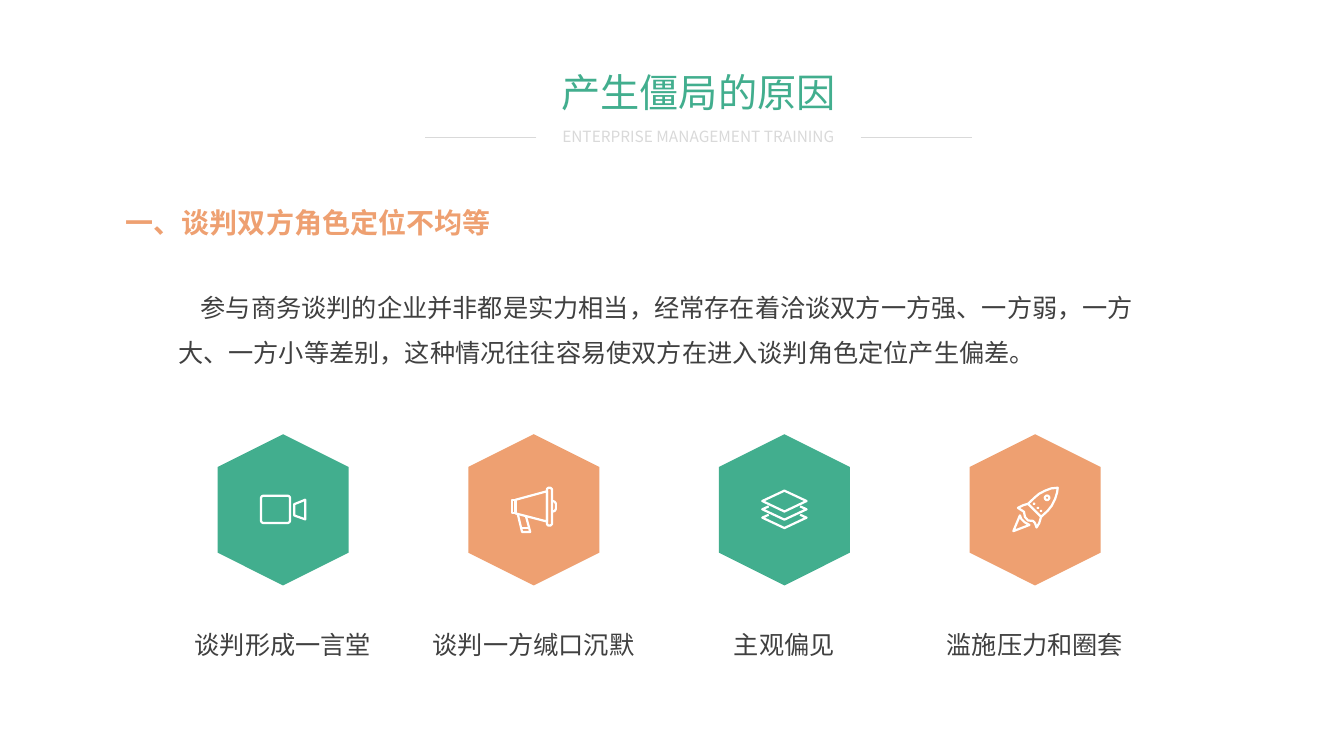
import math
import pptx
import pptx.dml.color
import pptx.enum.shapes
import pptx.enum.text
import pptx.oxml.ns
import pptx.util
from lxml import etree

Pt = pptx.util.Pt
SHAPE = pptx.enum.shapes.MSO_SHAPE
CENTER = pptx.enum.text.PP_ALIGN.CENTER
FONT = "Noto Sans CJK SC"
GREEN, ORANGE, DARK, PALE, WHITE = "42AE8E", "EEA071", "404040", "D9D9D9", "FFFFFF"


def ring(x, y, radius, sides):
    """A closed regular polygon as one icon stroke."""
    turns = [2 * math.pi * i / sides for i in range(sides)]
    return True, [(x + radius * math.cos(t), y + radius * math.sin(t)) for t in turns]


def layer(drop):
    return False, [(-112, drop - 25), (-158, drop - 4), (0, drop + 70),
                   (158, drop - 4), (112, drop - 25)]


# Content: text as (words, left, top, width, height, format)
TITLE = ("产生僵局的原因", 385.9, 45.4, 226, 41,
         {"size": Pt(28), "color": GREEN, "alignment": CENTER})
SUBTITLE = ("ENTERPRISE MANAGEMENT TRAINING", 383.2, 87.3, 231.6, 21,
            {"size": Pt(11), "color": PALE, "alignment": CENTER})
HEADING = ("一、谈判双方角色定位不均等", 82.8, 143.3, 486, 31.7,
           {"size": Pt(20), "color": ORANGE, "bold": True})
BODY = ("参与商务谈判的企业并非都是实力相当，经常存在着洽谈双方一方强、一方弱，"
        "一方大、一方小等差别，这种情况往往容易使双方在进入谈判角色定位产生偏差。",
        120.2, 194.4, 700.6, 69.1,
        {"size": Pt(18), "color": DARK, "line_spacing": 1.5, "indent": Pt(16.1)})

# Icons: strokes as (closed, points), in tenths of a point from the hexagon centre
CAMERA = [
    (True, [(-158, -85), (-153, -96), (-142, -101), (34, -101), (45, -96), (50, -85),
            (50, 78), (45, 89), (34, 94), (-142, 94), (-153, 89), (-158, 78)]),
    (True, [(79, -40), (158, -72), (158, 68), (79, 40)]),
]
MEGAPHONE = [
    (True, [(-158, -72), (-130, -72), (-130, 25), (-158, 25)]),
    (True, [(-130, -72), (94, -133), (94, 83), (-130, 25)]),
    (True, [(94, -148), (104, -158), (120, -158), (130, -148),
            (130, 102), (120, 112), (104, 112), (94, 102)]),
    (False, [(130, -65), (150, -58), (158, -45), (158, -6), (150, 7), (130, 14)]),
    (False, [(-115, 25), (-83, 158), (-25, 158), (-54, 50)]),
    (False, [(-88, 130), (-32, 130)]),
]
LAYERS = [(True, [(0, -137), (158, -63), (0, 12), (-158, -63)]), layer(0), layer(60)]
ROCKET = [
    (True, [(162, -158), (115, -153), (72, -137), (30, -115), (0, -90), (-50, -43),
            (43, 50), (90, 7), (120, -30), (144, -79), (158, -125)]),
    (False, [(-50, -43), (-85, -33), (-122, -14), (-79, 14), (-72, 50), (-50, 76),
             (-14, 79), (0, 95), (11, 126), (30, 95), (43, 50)]),
    (True, [(-108, 40), (-155, 152), (-40, 108), (-75, 88), (-98, 65)]),
    ring(86, -86, 16, 16),
] + [ring(x, y, 2, 4) for x, y in [(-7, -43), (21, -14), (43, 7)]]

CAUSES = [
    ("谈判形成一言堂", GREEN, CAMERA),
    ("谈判一方缄口沉默", ORANGE, MEGAPHONE),
    ("主观偏见", GREEN, LAYERS),
    ("滥施压力和圈套", ORANGE, ROCKET),
]

# Layout
FIRST_X, PITCH, HEXAGON_Y = 202.2, 179.05, 364.2
HEXAGON_LENGTH, HEXAGON_BREADTH = 108, 93.6
LABEL_TOP, LABEL_HEIGHT, LABEL_SIZE, INSETS = 445.7, 29, 18, 14.4
RULE_LENGTH = 79.3

deck = pptx.Presentation()
deck.slide_width, deck.slide_height = Pt(960), Pt(540)
slide = deck.slides.add_slide(deck.slide_layouts[6])
shapes = slide.shapes


def rgb(hex_color):
    return pptx.dml.color.RGBColor.from_string(hex_color)


def add_text(words, left, top, width, height, style, wrap=True):
    box = shapes.add_textbox(Pt(left), Pt(top), Pt(width), Pt(height))
    box.text_frame.word_wrap = wrap
    paragraph = box.text_frame.paragraphs[0]
    run = paragraph.add_run()
    run.text = words
    run.font.name = FONT
    properties = run.font._element
    etree.SubElement(properties, pptx.oxml.ns.qn("a:ea"), typeface=FONT)
    for key, value in style.items():
        if key == "color":
            run.font.color.rgb = rgb(value)
        elif key == "indent":
            paragraph._p.get_or_add_pPr().set("indent", str(int(value)))
        else:
            setattr(run.font if key in ("size", "bold") else paragraph, key, value)
    return box


def add_icon(strokes, x, y):
    builder = None
    for closed, points in strokes:
        if builder is None:
            builder = shapes.build_freeform(*points[0], scale=Pt(0.1))
        else:
            builder.move_to(*points[0])
        builder.add_line_segments(points[1:], close=closed)
    icon = builder.convert_to_shape(Pt(x), Pt(y))
    icon.shadow.inherit = False
    icon.fill.background()
    icon.line.color.rgb = rgb(WHITE)
    icon.line.width = Pt(1.6)
    etree.SubElement(icon.line._get_or_add_ln(), pptx.oxml.ns.qn("a:round"))


# Title, subtitle and the rules at its sides
add_text(*TITLE)
subtitle = add_text(*SUBTITLE)
_, left, top, width, height, _ = SUBTITLE
rule_y = Pt(top + height / 2)
for site, near, far in [(1, left, left - RULE_LENGTH),
                        (3, left + width, left + width + RULE_LENGTH)]:
    rule = shapes.add_connector(pptx.enum.shapes.MSO_CONNECTOR.STRAIGHT,
                                Pt(near), rule_y, Pt(far), rule_y)
    rule.begin_connect(subtitle, site)
    rule.line.color.rgb = rgb(PALE)
    rule.line.width = Pt(0.5)
    etree.SubElement(rule._element.spPr, pptx.oxml.ns.qn("a:effectLst"))

# Heading and explanation
add_text(*HEADING)
add_text(*BODY)

# Four causes: hexagon, icon, label
for column, (label, color, strokes) in enumerate(CAUSES):
    x = FIRST_X + column * PITCH
    hexagon = shapes.add_shape(
        SHAPE.HEXAGON, Pt(x - HEXAGON_LENGTH / 2), Pt(HEXAGON_Y - HEXAGON_BREADTH / 2),
        Pt(HEXAGON_LENGTH), Pt(HEXAGON_BREADTH))
    hexagon.rotation = 90
    hexagon.shadow.inherit = False
    hexagon.fill.solid()
    hexagon.fill.fore_color.rgb = rgb(color)
    hexagon.line.fill.background()
    add_icon(strokes, x, HEXAGON_Y)
    label_width = len(label) * LABEL_SIZE + INSETS
    add_text(label, x - label_width / 2, LABEL_TOP, label_width, LABEL_HEIGHT,
             {"size": Pt(LABEL_SIZE), "color": DARK}, wrap=False)

deck.save("out.pptx")
